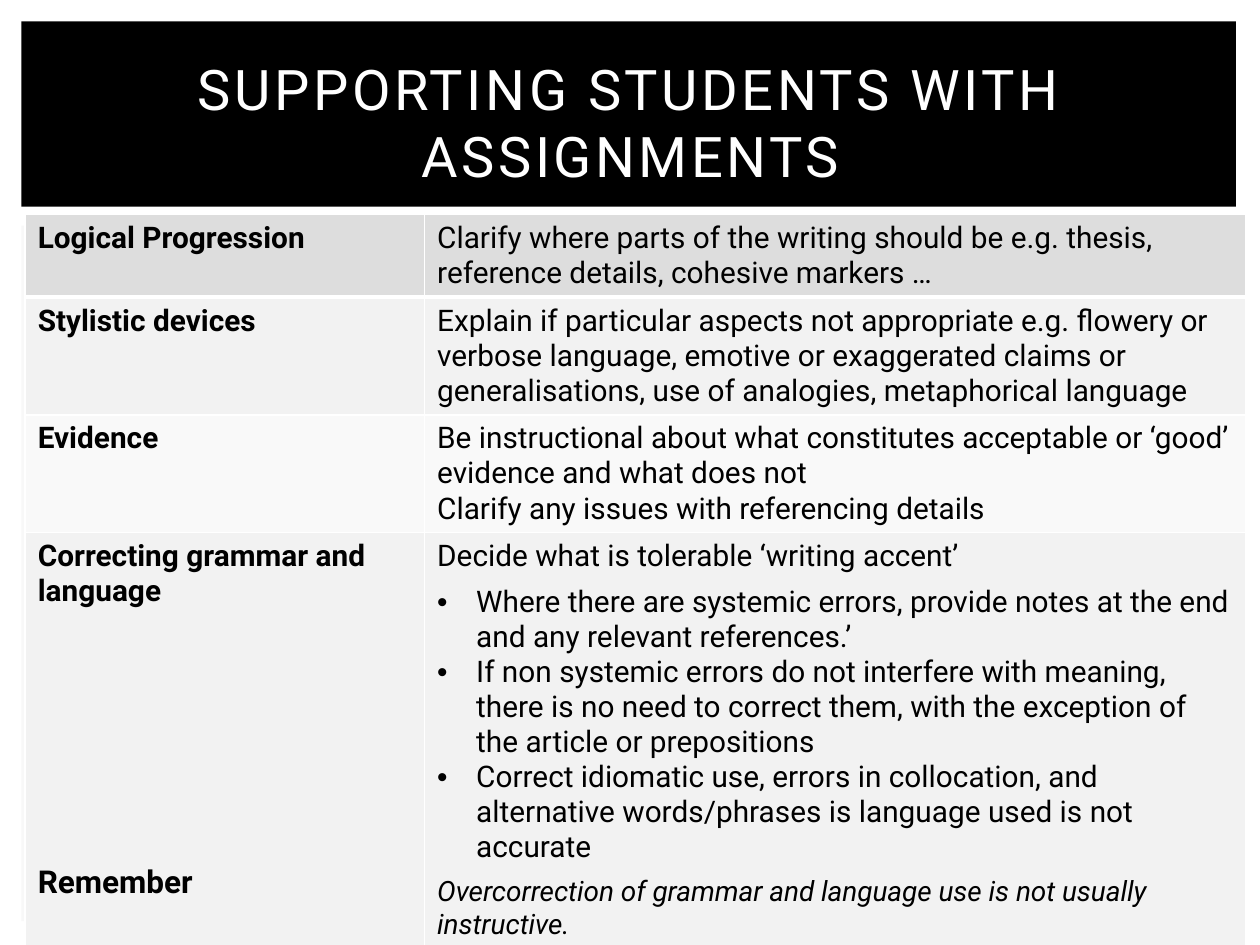
from dataclasses import dataclass

from lxml import etree
from pptx import Presentation
from pptx.dml.color import RGBColor
from pptx.enum.shapes import MSO_SHAPE
from pptx.enum.text import MSO_ANCHOR, MSO_AUTO_SIZE, PP_ALIGN
from pptx.oxml.ns import qn
from pptx.util import Inches, Pt

RECTANGLE = MSO_SHAPE.RECTANGLE
MIDDLE = MSO_ANCHOR.MIDDLE
NO_FIT = MSO_AUTO_SIZE.NONE
CENTER = PP_ALIGN.CENTER
TITLE_ONLY = 5


@dataclass(frozen=True)
class Theme:
    font: str = "Roboto"
    ink: str = "000000"
    paper: str = "FFFFFF"
    panel: str = "F8F8F8"
    first_row: str = "DDDDDD"
    dark_band: str = "F2F2F2"
    light_band: str = "F9F9F9"
    title_size: int = 32
    body_size: int = 17
    label_size: int = 18
    note_size: int = 16
    title_spacing: int = 200
    bullet_indent: float = 0.31


@dataclass(frozen=True)
class Line:
    """One paragraph of a table cell."""
    text: str
    size: int = Theme.body_size
    bold: bool = False
    italic: bool = False
    bullet: bool = False
    before: int = 0
    after: int = 0


class SlideBuilder:
    def __init__(self, deck, theme):
        self.theme = theme
        self.page = deck.slides.add_slide(deck.slide_layouts[TITLE_ONLY])

    def panel(self, left, top, width, height, color):
        box = self.page.shapes.add_shape(
            RECTANGLE, Inches(left), Inches(top), Inches(width), Inches(height))
        box.shadow.inherit = False
        box.fill.solid()
        box.fill.fore_color.rgb = RGBColor.from_string(color)
        box.line.fill.background()

    def add_span(self, para, text, size, color, bold=False, italic=False):
        span = para.add_run()
        span.text = text
        font = span.font
        font.name, font.size = self.theme.font, Pt(size)
        font.bold, font.italic = bold, italic
        font.color.rgb = RGBColor.from_string(color)
        return span

    def title(self, text, left, top, width, height):
        box = self.page.shapes.title
        box.left, box.top = Inches(left), Inches(top)
        box.width, box.height = Inches(width), Inches(height)
        frame = box.text_frame
        frame.word_wrap = True
        frame.auto_size = NO_FIT
        frame.vertical_anchor = MIDDLE
        para = frame.paragraphs[0]
        para.alignment = CENTER
        span = self.add_span(para, text, self.theme.title_size, self.theme.paper)
        span.font.element.set("spc", str(self.theme.title_spacing)) if hasattr(
            span.font, "element") else para.runs[0]._r.get_or_add_rPr().set(
            "spc", str(self.theme.title_spacing))
        # The title stands in front of its band
        box.element.getparent().append(box.element)

    def add_bullet(self, para):
        indent = Inches(self.theme.bullet_indent)
        props = para._p.get_or_add_pPr()
        props.set("marL", str(indent))
        props.set("indent", str(-indent))
        etree.SubElement(props, qn("a:buFont"), typeface="Arial")
        etree.SubElement(props, qn("a:buChar"), char="•")

    def cell_borders(self, cell, widths):
        props = cell._tc.get_or_add_tcPr()
        for position, (side, width) in enumerate(widths.items()):
            edge = etree.Element(qn(f"a:ln{side}"), w=str(Pt(width)))
            fill = etree.SubElement(edge, qn("a:solidFill"))
            etree.SubElement(fill, qn("a:srgbClr"), val=self.theme.paper)
            props.insert(position, edge)

    def fill_cell(self, cell, lines, color):
        cell.fill.solid()
        cell.fill.fore_color.rgb = RGBColor.from_string(color)
        frame = cell.text_frame
        for number, line in enumerate(lines):
            para = frame.add_paragraph() if number else frame.paragraphs[0]
            para.space_before, para.space_after = Pt(line.before), Pt(line.after)
            if line.bullet:
                self.add_bullet(para)
            self.add_span(para, line.text, line.size, self.theme.ink,
                          line.bold, line.italic)

    def table(self, left, top, widths, heights, rows, colors):
        frame = self.page.shapes.add_table(
            len(rows), len(widths), Inches(left), Inches(top),
            Inches(sum(widths)), Inches(sum(heights)))
        grid = frame.table
        for column, width in zip(grid.columns, widths):
            column.width = Inches(width)
        for index, (row, height) in enumerate(zip(grid.rows, heights)):
            row.height = Inches(height)
            edges = {"L": 1, "R": 1, "T": 3 if index == 1 else 1,
                     "B": 3 if index == 0 else 1}
            for cell, lines in zip(row.cells, rows[index]):
                self.fill_cell(cell, lines, colors[index])
                self.cell_borders(cell, edges)


def main():
    theme = Theme()
    deck = Presentation()
    deck.slide_width, deck.slide_height = Inches(10), Inches(7.5)
    slide = SlideBuilder(deck, theme)

    # Backdrop and title band
    slide.panel(0.17, 1.79, 9.66, 5.52, theme.panel)
    slide.panel(0.17, 0.17, 9.64, 1.47, theme.ink)

    # Advice table: topic on the left, guidance on the right
    rows = [
        ([Line("Logical Progression", bold=True)],
         [Line("Clarify where parts of the writing should be e.g. thesis, "
               "reference details, cohesive markers …")]),
        ([Line("Stylistic devices", bold=True)],
         [Line("Explain if particular aspects not appropriate e.g. flowery or "
               "verbose language, emotive or exaggerated claims or "
               "generalisations, use of analogies, metaphorical language")]),
        ([Line("Evidence", bold=True)],
         [Line("Be instructional about what constitutes acceptable or ‘good’ "
               "evidence and what does not"),
          Line("Clarify any issues with referencing details")]),
        ([Line("Correcting grammar and language", bold=True),
          Line("Remember", theme.label_size, bold=True, before=146)],
         [Line("Decide what is tolerable ‘writing accent’", after=6),
          Line("Where there are systemic errors, provide notes at the end and "
               "any relevant references.’", bullet=True),
          Line("If non systemic errors do not interfere with meaning, there is "
               "no need to correct them, with the exception of the article or "
               "prepositions", bullet=True),
          Line("Correct idiomatic use, errors in collocation, and alternative "
               "words/phrases is language used is not accurate",
               bullet=True, after=6),
          Line("Overcorrection of grammar and language use is not usually "
               "instructive.", theme.note_size, italic=True)]),
    ]
    colors = [theme.first_row, theme.dark_band, theme.light_band, theme.dark_band]
    slide.table(0.2, 1.7, [3.17, 6.52], [0.62, 0.89, 0.89, 3.51], rows, colors)

    # Title
    slide.title("SUPPORTING STUDENTS WITH ASSIGNMENTS", 0.42, 0.39, 9.17, 1.15)

    deck.save("out.pptx")


if __name__ == "__main__":
    main()
